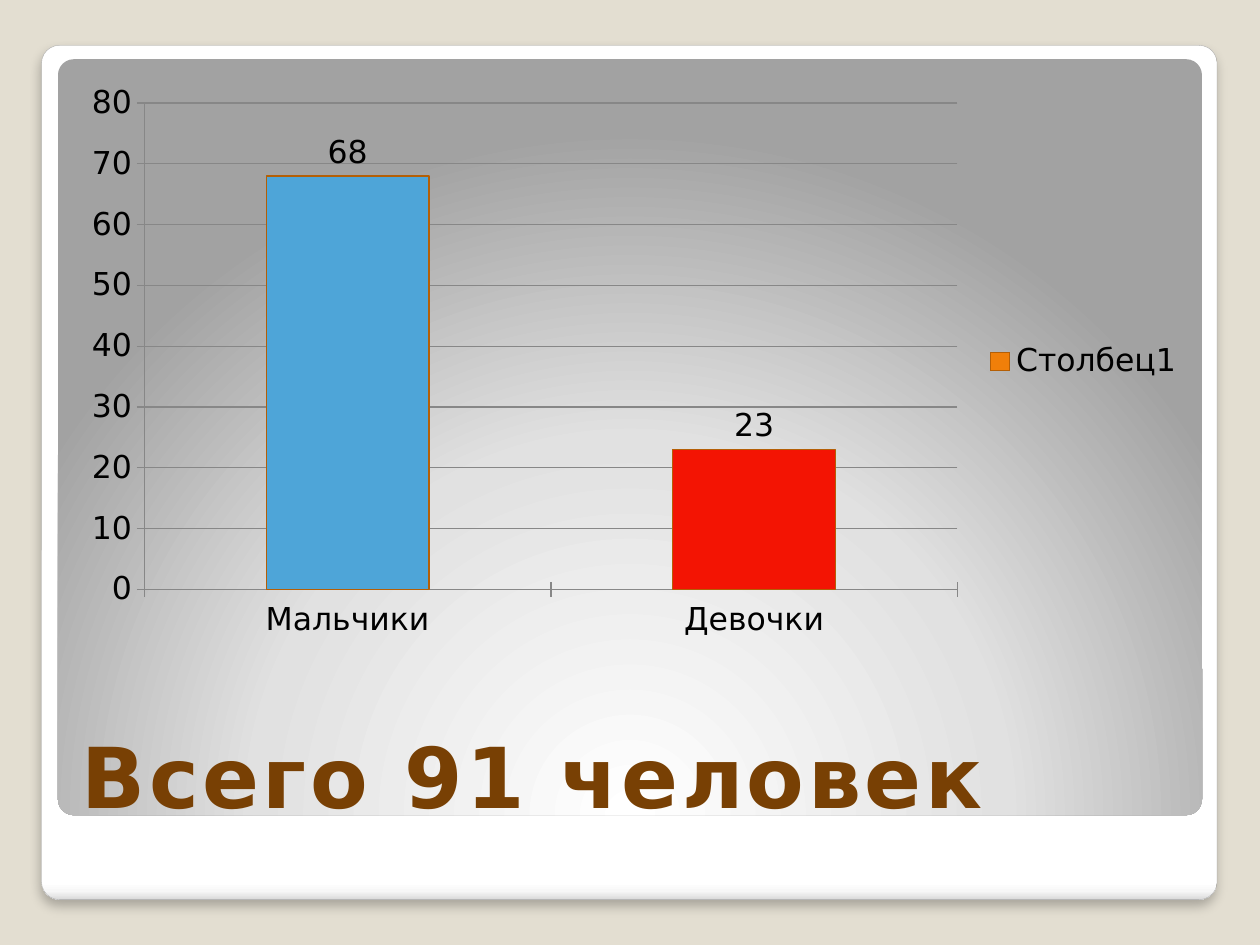
"""Build a slide with a column chart of boys and girls on a framed panel."""
from lxml.etree import SubElement
from pptx import Presentation
from pptx.chart.data import CategoryChartData as Data
from pptx.dml.color import RGBColor as RGB
from pptx.enum.chart import XL_CHART_TYPE as Kind, XL_LABEL_POSITION as Spot
from pptx.enum.chart import XL_LEGEND_POSITION as Side, XL_TICK_MARK as Tick
from pptx.enum.shapes import MSO_SHAPE as Form
from pptx.enum.text import MSO_ANCHOR as Anchor, PP_ALIGN as Align
from pptx.oxml import parse_xml
from pptx.oxml.ns import nsdecls, qn
from pptx.util import Inches, Pt

BACK = RGB(0xE3, 0xDE, 0xD1)
EDGE = RGB(0xA4, 0xA4, 0xA4)
BROWN = RGB(0x78, 0x40, 0x04)
RIM = RGB(0xF4, 0xF5, 0xF6)
BLACK = RGB(0, 0, 0)
GRID = RGB(0x87, 0x87, 0x87)
ORANGE = RGB(0xF0, 0x7F, 0x09)
RUST = RGB(0xB4, 0x5F, 0x06)
BLUE = RGB(0x4E, 0xA5, 0xD8)
RED = RGB(0xF3, 0x14, 0x03)
FONT = "DejaVu Sans"
LEFT, WIDE = 0.55, 8.95
FRAME = ((0, "FFFFFF"), (98, "FFFFFF"), (99, "F7F7F7"), (100, "DADADA"))
GLOW = ((0, "FFFFFF"), (55, "E1E1E1"), (100, "A2A2A2"))
DOWN = '<a:lin ang="5400000" scaled="0"/>'
ROUND = ('<a:path path="circle"><a:fillToRect l="50000" t="175000" '
         'r="50000" b="-75000"/></a:path>')
SHADE = (f'<a:effectLst {nsdecls("a")}><a:outerShdw blurRad="{Pt(6)}" '
         f'dist="{Pt(4)}" dir="5400000" algn="t" rotWithShape="0">'
         '<a:srgbClr val="000000"><a:alpha val="25000"/></a:srgbClr>'
         '</a:outerShdw></a:effectLst>')


def box(*spans):
    """Turn inches into lengths."""
    return [Inches(n) for n in spans]


def style(item, **looks):
    """Set each given attribute."""
    for name, value in looks.items():
        setattr(item, name, value)


def paint(look, color):
    """Fill with one colour."""
    look.fill.solid()
    look.fill.fore_color.rgb = color


def stroke(line, color, width):
    """Colour a line and set its width."""
    line.color.rgb = color
    line.width = Pt(width)


def panel(slide, spans, stops, way):
    """Add a rounded panel with a gradient."""
    shape = slide.shapes.add_shape(Form.ROUNDED_RECTANGLE, *box(*spans))
    shape.adjustments[0] = 0.021
    shape.shadow.inherit = False
    shape.line.fill.background()
    marks = "".join(f'<a:gs pos="{pos * 1000}"><a:srgbClr val="{tone}"/></a:gs>'
                    for pos, tone in stops)
    grad = parse_xml(f'<a:gradFill {nsdecls("a")} rotWithShape="1">'
                     f'<a:gsLst>{marks}</a:gsLst>{way}</a:gradFill>')
    shape.element.spPr.find(qn("a:prstGeom")).addnext(grad)
    return shape


def frame(slide):
    """Add the white frame and the grey panel in it."""
    outer = panel(slide, (0.33, 0.36, 9.33, 6.78), FRAME, DOWN)
    stroke(outer.line, EDGE, 0.16)
    props = outer.element.spPr
    props.replace(props.find(qn("a:effectLst")), parse_xml(SHADE))
    panel(slide, (0.46, 0.47, 9.08, 6), GLOW, ROUND)


def head(slide, text):
    """Place the title in front of the panels."""
    title = slide.shapes.title
    title.element.getparent().append(title.element)
    left, top, width, height = box(LEFT, 5.45, WIDE, 1.15)
    style(title, left=left, top=top, width=width, height=height)
    style(title.text_frame, text=text, word_wrap=True,
          vertical_anchor=Anchor.BOTTOM)
    para = title.text_frame.paragraphs[0]
    para.alignment = Align.LEFT
    run = para.runs[0]
    style(run.font, name=FONT, size=Pt(48), bold=True)
    run.font.color.rgb = BROWN
    props = run.font.fill and run._r.get_or_add_rPr()
    props.set("spc", "200")
    rim = SubElement(props, qn("a:ln"), w=str(Pt(2.3)))
    SubElement(SubElement(rim, qn("a:solidFill")), qn("a:srgbClr"), val=str(RIM))
    props.insert(0, rim)


def graph(slide, name, counts):
    """Add the column chart."""
    data = Data()
    data.categories = list(counts)
    data.add_series(name, [value for value, _ in counts.values()])
    chart = slide.shapes.add_chart(
        Kind.COLUMN_CLUSTERED, *box(LEFT, 0.58, WIDE, 4.58), data).chart
    style(chart, has_title=False, has_legend=True)
    style(chart.font, name=FONT, size=Pt(18))
    chart.font.color.rgb = BLACK
    style(chart.legend, position=Side.RIGHT, include_in_layout=False)
    for axis in (chart.category_axis, chart.value_axis):
        style(axis, major_tick_mark=Tick.CROSS, minor_tick_mark=Tick.NONE)
        stroke(axis.format.line, GRID, 0.75)
    style(chart.value_axis, minimum_scale=0, maximum_scale=80, major_unit=10,
          has_major_gridlines=True)
    stroke(chart.value_axis.major_gridlines.format.line, GRID, 0.75)
    plot = chart.plots[0]
    style(plot, gap_width=150, vary_by_categories=False, has_data_labels=True)
    style(plot.data_labels, show_value=True, position=Spot.OUTSIDE_END)
    bars = plot.series[0]
    bars.invert_if_negative = False
    looks = [(bars.format, ORANGE)]
    looks += [(bars.points[n].format, tone)
              for n, (_, tone) in enumerate(counts.values())]
    for look, tone in looks:
        paint(look, tone)
        stroke(look.line, RUST, 0.75)


def main():
    """Build and save the slide."""
    deck = Presentation()
    deck.slide_width, deck.slide_height = box(10, 7.5)
    slide = deck.slides.add_slide(deck.slide_layouts[5])
    paint(slide.background, BACK)
    frame(slide)
    head(slide, "Всего 91 человек")
    graph(slide, "Столбец1", {"Мальчики": (68, BLUE), "Девочки": (23, RED)})
    deck.save("out.pptx")


if __name__ == "__main__":
    main()
